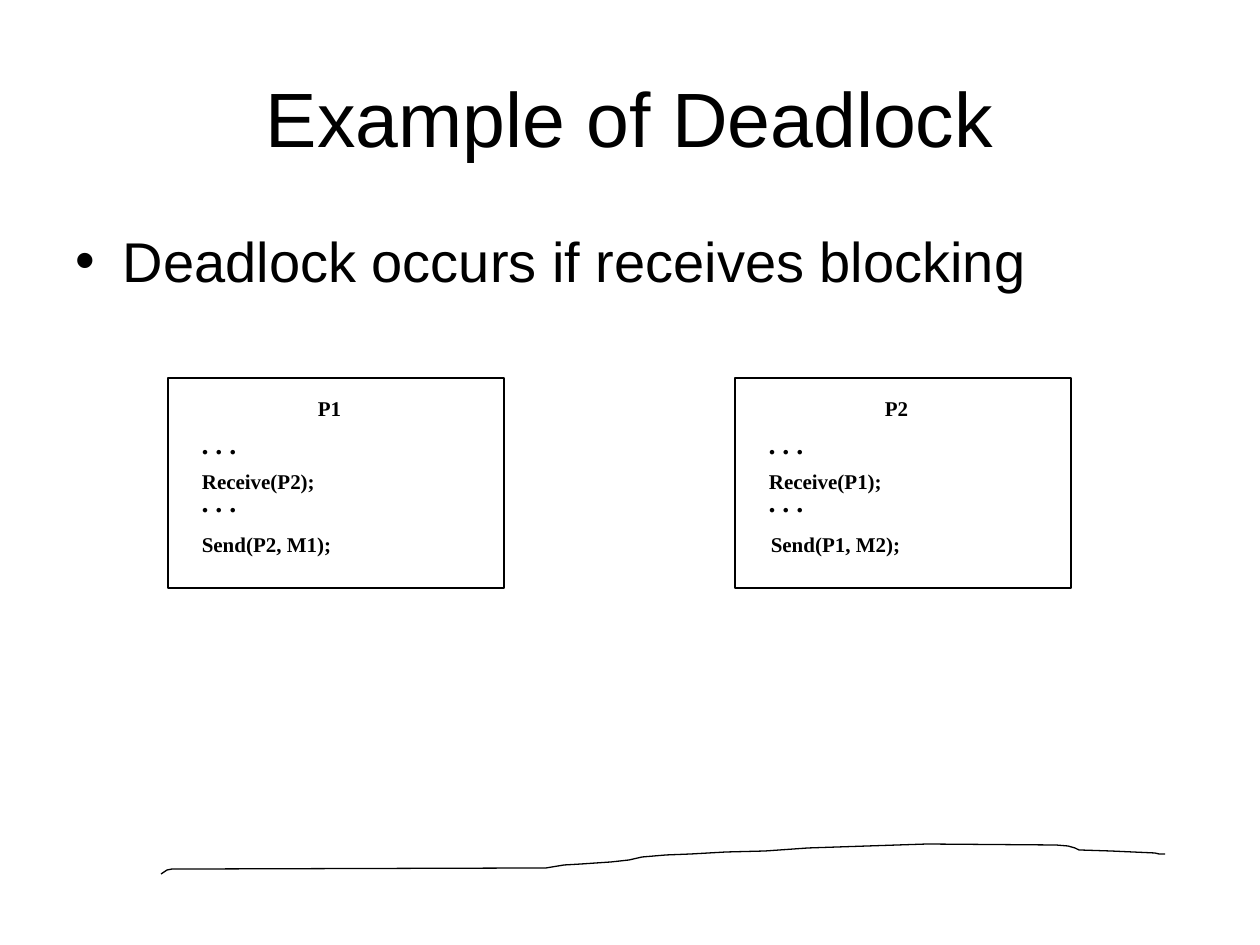
import pptx
import pptx.util
import pptx.dml.color
import pptx.enum.shapes
import pptx.enum.text
import lxml.etree
from dataclasses import dataclass

UNIT = 914400 / 126


@dataclass(frozen=True)
class Theme:
    """Colours, fonts and type sizes of the slide."""
    ink: str = "000000"
    paper: str = "FFFFFF"
    sans: str = "Arial"
    serif: str = "Times New Roman"
    title: int = 44
    body: int = 32
    dots: int = 16
    code: int = 12
    frame: float = 1
    rule: float = 0.75


THEME = Theme()
STROKE = [(0, 30), (6, 26), (11, 25), (27, 25), (385, 24), (391, 23), (403, 21),
          (420, 20), (450, 18), (468, 16), (481, 13), (505, 11), (530, 10),
          (565, 8), (604, 7), (647, 4), (766, 0), (895, 1), (907, 2), (914, 4),
          (918, 6), (950, 7), (994, 9), (998, 10), (1004, 10)]


def px(num):
    """Turn px into EMU."""
    return pptx.util.Emu(round(num * UNIT))


def tint(code):
    """Return a colour object for a hex code."""
    return pptx.dml.color.RGBColor.from_string(code)


def apply(item, form):
    """Set the attributes of an object from a dict."""
    for key, val in form.items():
        setattr(item, key, val)


def write(frame, text, face, size, bold, align):
    """Fill a text frame with one formatted paragraph."""
    frame.text = text
    para = frame.paragraphs[0]
    if align is not None:
        para.alignment = align
    apply(para.font, {"name": face, "size": pptx.util.Pt(size), "bold": bold})
    para.font.color.rgb = tint(THEME.ink)


def outline(shape, width):
    """Give a shape a plain line and no shadow."""
    shape.shadow.inherit = False
    shape.line.color.rgb = tint(THEME.ink)
    shape.line.width = pptx.util.Pt(width)


def holder(shape, box, text, size, align=None):
    """Place and fill a template placeholder."""
    apply(shape, dict(zip(("left", "top", "width", "height"), map(px, box))))
    write(shape.text_frame, text, THEME.sans, size, False, align)


def stroke(slide, left, top):
    """Draw the hand-drawn rule from its top left corner."""
    spots = [(px(left + x), px(top + y)) for x, y in STROKE]
    pen = slide.shapes.build_freeform(*spots[0])
    pen.add_line_segments(spots[1:], close=False)
    shape = pen.convert_to_shape()
    shape.fill.background()
    outline(shape, THEME.rule)
    return shape


def label(slide, box, text, size):
    """Add a centred bold label that does not wrap."""
    frame = slide.shapes.add_textbox(*map(px, box)).text_frame
    apply(frame, {"word_wrap": False,
                  "auto_size": pptx.enum.text.MSO_AUTO_SIZE.SHAPE_TO_FIT_TEXT})
    write(frame, text, THEME.serif, size, True, pptx.enum.text.PP_ALIGN.CENTER)


def process(slide, box, name, peer, note, shift):
    """Draw one process frame with its code lines."""
    left, top = box[:2]
    rect = slide.shapes.add_shape(
        pptx.enum.shapes.MSO_SHAPE.RECTANGLE, *map(px, box))
    rect.fill.solid()
    rect.fill.fore_color.rgb = tint(THEME.paper)
    outline(rect, THEME.frame)
    rows = [(137, 11, 49, 38, name, THEME.code),
            (21, 42, 60, 47, ". . .", THEME.dots),
            (21, 100, 60, 47, ". . .", THEME.dots),
            (21, 84, 139, 38, f"Receive({peer});", THEME.code),
            (21 + shift, 147, 155, 38, f"Send({peer}, {note});", THEME.code)]
    for x, y, wide, high, text, size in rows:
        label(slide, (left + x, top + y, wide, high), text, size)


def main():
    """Build and save the slide."""
    deck = pptx.Presentation()
    apply(deck, {"slide_width": px(1260), "slide_height": px(945)})
    slide = deck.slides.add_slide(deck.slide_layouts[1])
    title, body = slide.placeholders
    holder(title, (63, 38, 1134, 157), "Example of Deadlock", THEME.title,
           pptx.enum.text.PP_ALIGN.CENTER)
    holder(body, (63, 220, 1134, 683), "Deadlock occurs if receives blocking",
           THEME.body)
    rule = stroke(slide, 161, 844)
    title.element.addprevious(rule.element)
    pairs = [("P1", "P2", "M1", 0), ("P2", "P1", "M2", 2)]
    for num, pair in enumerate(pairs):
        process(slide, (168 + 567 * num, 378, 336, 210), *pair)
    deck.save("out.pptx")


if __name__ == "__main__":
    main()
